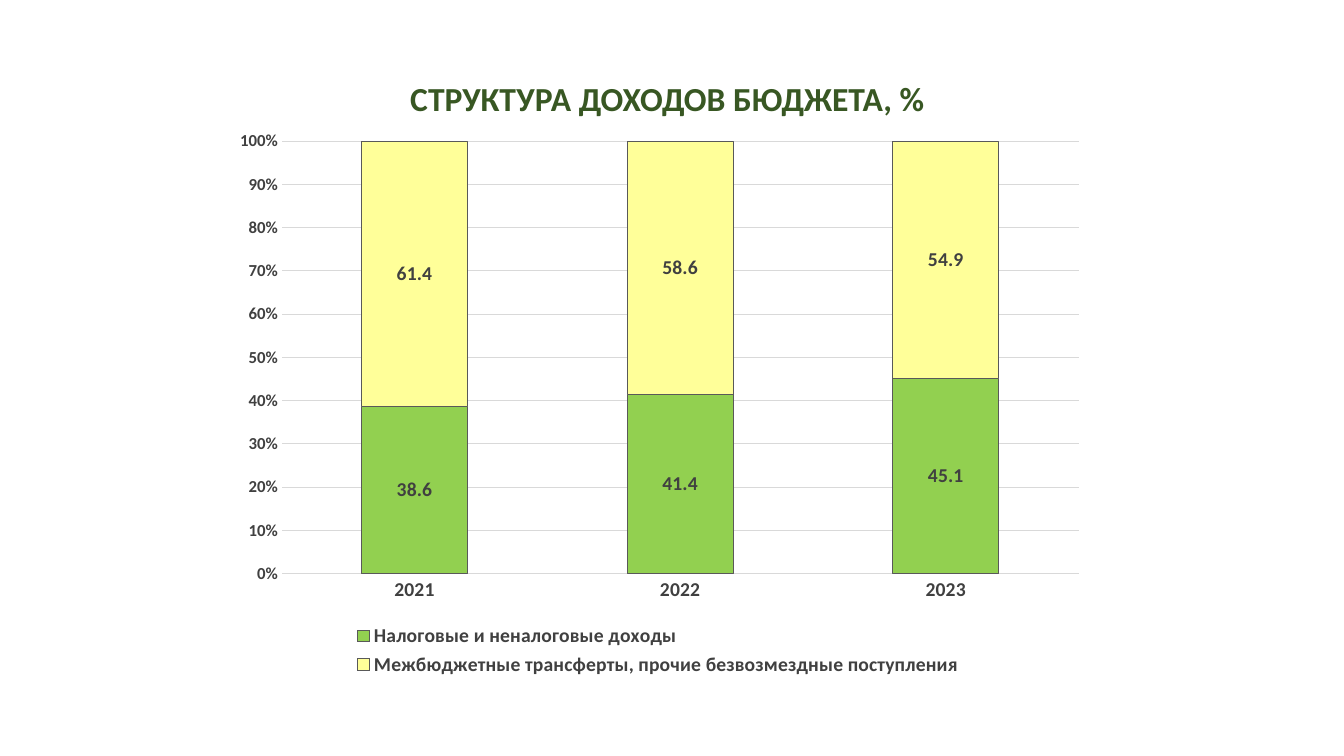
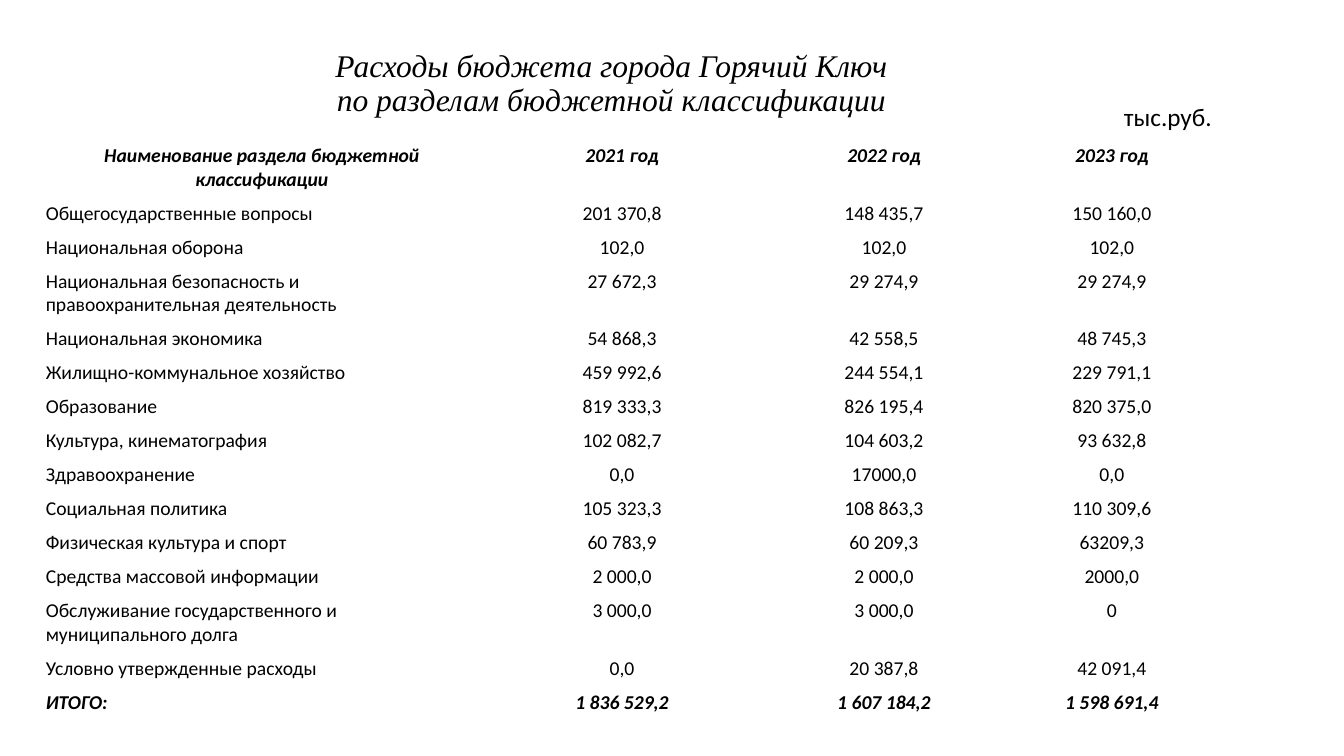
from lxml.etree import SubElement
from pptx import Presentation
from pptx.chart.data import CategoryChartData
from pptx.dml.color import RGBColor
from pptx.enum.chart import XL_CHART_TYPE, XL_LEGEND_POSITION, XL_TICK_MARK
from pptx.enum.text import MSO_ANCHOR, MSO_AUTO_SIZE, PP_ALIGN
from pptx.oxml.ns import qn
from pptx.util import Pt

PX = 9525
SANS, SERIF = "Calibri", "Times New Roman"
BLACK, GREY, EDGE, GRID, DARK = "000000", "404040", "595959", "D9D9D9", "385723"

YEARS = ["2021", "2022", "2023"]
SHARES = [
    ("Налоговые и неналоговые доходы", "92D050", [38.6, 41.4, 45.1]),
    ("Межбюджетные трансферты, прочие безвозмездные поступления",
     "FFFF99", [61.4, 58.6, 54.9]),
]
INCOME = ["СТРУКТУРА ДОХОДОВ БЮДЖЕТА, %"]
COSTS = ["Расходы бюджета города Горячий Ключ",
         "по разделам бюджетной классификации"]
UNIT = "тыс.руб."
COLS = [431, 255, 244, 190]
ROWS = [
    ("Наименование раздела бюджетной классификации",
     "2021 год", "2022 год", "2023 год"),
    ("Общегосударственные вопросы", "201 370,8", "148 435,7", "150 160,0"),
    ("Национальная оборона", "102,0", "102,0", "102,0"),
    ("Национальная безопасность и правоохранительная деятельность",
     "27 672,3", "29 274,9", "29 274,9"),
    ("Национальная экономика", "54 868,3", "42 558,5", "48 745,3"),
    ("Жилищно-коммунальное хозяйство", "459 992,6", "244 554,1", "229 791,1"),
    ("Образование", "819 333,3", "826 195,4", "820 375,0"),
    ("Культура, кинематография", "102 082,7", "104 603,2", "93 632,8"),
    ("Здравоохранение", "0,0", "17000,0", "0,0"),
    ("Социальная политика", "105 323,3", "108 863,3", "110 309,6"),
    ("Физическая культура и спорт", "60 783,9", "60 209,3", "63209,3"),
    ("Средства массовой информации", "2 000,0", "2 000,0", "2000,0"),
    ("Обслуживание государственного и муниципального долга",
     "3 000,0", "3 000,0", "0"),
    ("Условно утвержденные расходы", "0,0", "20 387,8", "42 091,4"),
    ("ИТОГО:", "1 836 529,2", "1 607 184,2", "1 598 691,4"),
]
TALL = (0, 12)


def px(*nums):
    return [n * PX for n in nums]


def tint(code):
    return RGBColor.from_string(code)


def style(font, size, color=BLACK, bold=False, slant=False, name=SANS):
    font.name, font.size, font.bold, font.italic = name, Pt(size), bold, slant
    font.color.rgb = tint(color)


def write(para, lines, align, size, **look):
    para.alignment = align
    for i, line in enumerate(lines):
        if i:
            para.add_line_break()
        run = para.add_run()
        run.text = line
        style(run.font, size, **look)


def start(deck, lines, box, size, **look):
    slide = deck.slides.add_slide(deck.slide_layouts[5])
    title = slide.shapes.title
    title.left, title.top, title.width, title.height = px(*box)
    frame = title.text_frame
    frame.word_wrap = True
    frame.auto_size = MSO_AUTO_SIZE.NONE
    frame.vertical_anchor = MSO_ANCHOR.MIDDLE
    para = frame.paragraphs[0]
    para.line_spacing = 0.9
    write(para, lines, PP_ALIGN.CENTER, size, **look)
    return slide


def place(chart, **spots):
    area = chart._chartSpace.chart.plotArea
    for old in area.findall(qn("c:layout")):
        area.remove(old)
    layout = SubElement(area, qn("c:layout"))
    area.insert(0, layout)
    manual = SubElement(layout, qn("c:manualLayout"))
    parts = {"layoutTarget": "inner", "xMode": "edge", "yMode": "edge", **spots}
    for tag, val in parts.items():
        SubElement(manual, qn("c:" + tag)).set("val", str(val))


def draw_chart(slide):
    data = CategoryChartData(number_format="0.0")
    data.categories = YEARS
    for name, _, vals in SHARES:
        data.add_series(name, vals)
    chart = slide.shapes.add_chart(XL_CHART_TYPE.COLUMN_STACKED_100,
                                   *px(210, 113, 834, 535), data).chart
    chart.has_title = False
    style(chart.font, 10)
    place(chart, x=0.07, y=0.04, w=0.91, h=0.77)

    for axis, size in ((chart.category_axis, 14), (chart.value_axis, 12)):
        axis.major_tick_mark = axis.minor_tick_mark = XL_TICK_MARK.NONE
        axis.format.line.fill.background()
        style(axis.tick_labels.font, size, GREY, bold=True)
    axis.has_major_gridlines = True
    grid = axis.major_gridlines.format.line
    grid.color.rgb, grid.width = tint(GRID), Pt(0.75)
    axis.tick_labels.number_format = "0%"
    axis.tick_labels.number_format_is_linked = False

    chart.has_legend = True
    chart.legend.position = XL_LEGEND_POSITION.BOTTOM
    chart.legend.include_in_layout = False
    style(chart.legend.font, 14, GREY, bold=True)

    plot = chart.plots[0]
    plot.gap_width, plot.overlap, plot.vary_by_categories = 150, 100, False
    for bar, (_, color, _) in zip(plot.series, SHARES):
        bar.format.fill.solid()
        bar.format.fill.fore_color.rgb = tint(color)
        edge = bar.format.line
        edge.color.rgb, edge.width = tint(EDGE), Pt(0.75)
        labels = bar.data_labels
        labels.show_value = True
        labels.number_format = "0.0"
        labels.number_format_is_linked = False
        style(labels.font, 14, GREY, bold=True)


def draw_table(slide):
    highs = [54 if i in TALL else 32 for i in range(len(ROWS))]
    table = slide.shapes.add_table(
        len(ROWS), len(COLS), *px(34, 132, sum(COLS), sum(highs))).table
    table.horz_banding = False
    for col, wide in zip(table.columns, COLS):
        col.width = wide * PX
    last = len(ROWS) - 1
    for r, (row, high) in enumerate(zip(ROWS, highs)):
        table.rows[r].height = high * PX
        strong = r in (0, last)
        for c, text in enumerate(row):
            cell = table.cell(r, c)
            cell.fill.background()
            align = PP_ALIGN.CENTER if c or not r else PP_ALIGN.LEFT
            write(cell.text_frame.paragraphs[0], [text], align, 14,
                  bold=strong, slant=strong)


def main():
    deck = Presentation()
    deck.slide_width, deck.slide_height = px(1280, 720)

    slide = start(deck, INCOME, (88, 69, 1095, 54), 24, color=DARK, bold=True)
    draw_chart(slide)

    slide = start(deck, COSTS, (298, 78, 569, 5), 22.5, slant=True, name=SERIF)
    draw_table(slide)
    note = slide.shapes.add_textbox(*px(1061, 92, 110, 38)).text_frame
    note.word_wrap = True
    write(note.paragraphs[0], [UNIT], PP_ALIGN.LEFT, 18)

    deck.save("out.pptx")


if __name__ == "__main__":
    main()
